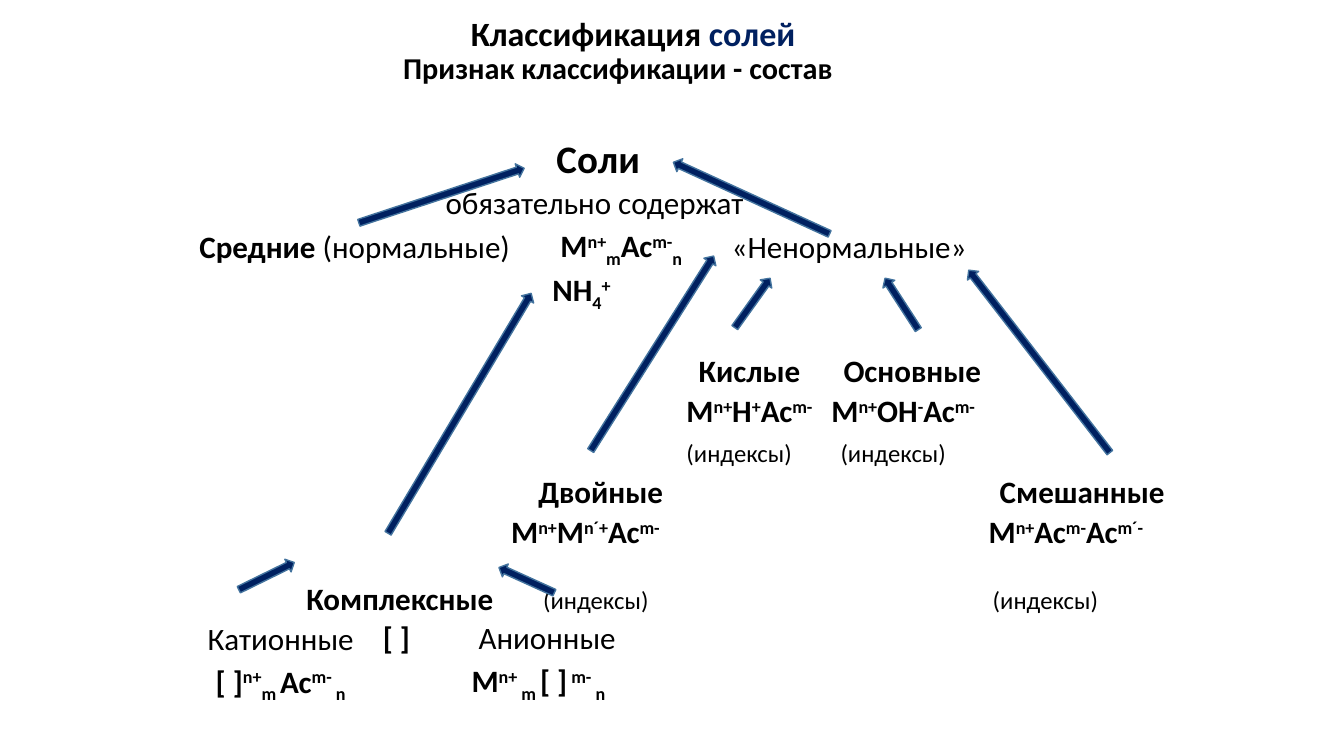
from math import atan2, degrees, hypot

from lxml.etree import SubElement
from pptx import Presentation
from pptx.dml.color import RGBColor
from pptx.enum.shapes import MSO_SHAPE
from pptx.enum.text import MSO_ANCHOR, MSO_AUTO_SIZE, PP_ALIGN
from pptx.oxml.ns import qn
from pptx.util import Inches, Pt

# The slide is laid on a grid of square cells, 133.33 columns by 75 rows.
CELL = Inches(0.1)
COLUMNS, ROWS = 133.33, 75
COLORS = {"text": "000000", "navy": "002060", "outline": "43739E"}
FONT = "Calibri"
LARGE, NORMAL, SMALL = 27.8, 22.2, 17.6
HEADING, SUBHEADING = 24.3, 21.6
GAP, BRANCH_GAP = 10, 39
ABOVE_SMALL, BELOW_SMALL, INDICES_GAP = 12.7, 11.2, 31.7
BASELINES = {"^": "30000", "_": "-25000"}
ARROW_THICKNESS = 1.4
SALTS_LEFT = 13.3

# Each line: space before, indent in columns, size, markup.
TITLE_LINES = [
    (0, 36.5, HEADING, "*Классификация |#солей"),
    (0, 29.8, SUBHEADING, "*Признак классификации - состав"),
]
SALT_LINES = [
    (0, 40.9, LARGE, "*Соли"),
    (GAP, 29.9, NORMAL, "обязательно содержат"),
    (GAP, 41.3, NORMAL, "*М|^n+|_m|*Ас|^m-|_n"),
    (GAP, 40.5, NORMAL, "*NH|_4|^+"),
    (BRANCH_GAP, 55, NORMAL, "*Кислые"),
    (GAP, 53.8, NORMAL, "*М|^n+|*Н|^+|*Ас|^m-"),
    (ABOVE_SMALL, 53.8, SMALL, "(индексы)"),
    (BELOW_SMALL, 39.1, NORMAL, "*Двойные"),
    (GAP, 36.4, NORMAL, "*М|^n+|*М|^n´+|*Ас|^m-"),
    (29, 16.1, NORMAL, "*Комплексные"),
    (GAP, 6.3, NORMAL, "Катионные"),
    (GAP, 7.1, NORMAL, "*[ ]|^n+|_m |*Ас|^m- |_n"),
]
# Each side group: column from the left of the salts, row, width, lines.
SIDE_GROUPS = [
    (5.5, 23.1, 34, [(0, 0, NORMAL, "*Средние| (нормальные)")]),
    (58.3, 23.1, 28, [(0, 0, NORMAL, "«Ненормальные»")]),
    (68.2, 35.4, 20, [(0, 1.2, NORMAL, "*Основные"),
                      (GAP, 0, NORMAL, "*М|^n+|*ОН|^-|*Ас|^m-"),
                      (ABOVE_SMALL, 0.9, SMALL, "(индексы)")]),
    (83.8, 47.4, 22, [(0, 1.1, NORMAL, "*Смешанные"),
                      (GAP, 0, NORMAL, "*М|^n+|*Ас|^m-|*Ас|^m´-"),
                      (INDICES_GAP, 0.4, SMALL, "(индексы)")]),
    (39.6, 58.3, 16, [(0, 0, SMALL, "(индексы)")]),
    (23.7, 61.9, 7, [(0, 0, NORMAL, "*[ ]")]),
    (32.5, 61.9, 20, [(0, 0.7, NORMAL, "Анионные"),
                      (GAP, 0, NORMAL, "*М|^n+ |_m |*[ ]|^ m- |_n")]),
]
# Each arrow: column and row of its tail, then of its head.
ARROWS = [
    ((38.5, 52.9), (52.7, 29.1)),
    ((35.6, 22.1), (52, 16.7)),
    ((91.1, 32.7), (87.8, 27.6)),
    ((58.6, 44.7), (70.8, 25.4)),
    ((110.1, 44.9), (96.1, 26.8)),
    ((82.3, 23.2), (66.8, 16.1)),
    ((72.9, 32.5), (76.4, 27.6)),
    ((23.7, 58.5), (29.2, 55.8)),
    ((55, 58.8), (49.5, 56.3)),
]


def cells(count):
    return round(count * CELL)


def rgb(name):
    return RGBColor.from_string(COLORS[name])


def apply(target, values):
    for attribute, value in values.items():
        setattr(target, attribute, value)


def add_markup(paragraph, markup, size):
    """Write parts split by |: * bold, # bold navy, ^ superscript, _ subscript."""
    for part in markup.split("|"):
        mark = part[0] if part[0] in "*#^_" else ""
        run = paragraph.add_run()
        run.text = part[len(mark):]
        apply(run.font, {"name": FONT, "size": Pt(size), "bold": bool(mark)})
        run.font.color.rgb = rgb("navy" if mark == "#" else "text")
        if mark in BASELINES:
            run.font._element.set("baseline", BASELINES[mark])


def indent(paragraph, columns):
    properties = paragraph._p.get_or_add_pPr()
    properties.set("marL", str(cells(columns)))
    properties.set("indent", "0")
    SubElement(properties, qn("a:buNone"))


def write_lines(frame, lines, anchor=MSO_ANCHOR.TOP, line_spacing=0.7):
    apply(frame, {"word_wrap": True, "auto_size": MSO_AUTO_SIZE.NONE,
                  "vertical_anchor": anchor})
    for index, (space_before, column, size, markup) in enumerate(lines):
        paragraph = frame.add_paragraph() if index else frame.paragraphs[0]
        indent(paragraph, column)
        apply(paragraph, {"alignment": PP_ALIGN.LEFT, "line_spacing": line_spacing,
                          "space_before": Pt(space_before), "space_after": Pt(0)})
        add_markup(paragraph, markup, size)


def place(placeholder, *box):
    apply(placeholder, dict(zip(("left", "top", "width", "height"), map(cells, box))))


def add_side_group(slide, column, row, width, lines):
    box = (SALTS_LEFT + column, row, width, 4 * len(lines))
    write_lines(slide.shapes.add_textbox(*map(cells, box)).text_frame, lines)


def add_arrow(slide, tail, head):
    across, down = head[0] - tail[0], head[1] - tail[1]
    length = hypot(across, down)
    left = (tail[0] + head[0] - length) / 2
    top = (tail[1] + head[1] - ARROW_THICKNESS) / 2
    arrow = slide.shapes.add_shape(
        MSO_SHAPE.RIGHT_ARROW, *map(cells, (left, top, length, ARROW_THICKNESS)))
    arrow.rotation = degrees(atan2(down, across)) % 360
    arrow.shadow.inherit = False
    arrow.fill.solid()
    arrow.fill.fore_color.rgb = rgb("navy")
    arrow.line.color.rgb = rgb("outline")
    arrow.line.width = Pt(1)


def main():
    presentation = Presentation()
    apply(presentation, {"slide_width": cells(COLUMNS), "slide_height": cells(ROWS)})
    slide = presentation.slides.add_slide(presentation.slide_layouts[1])
    title, salts = slide.placeholders
    place(title, 9.2, 0, 115, 10.2)
    write_lines(title.text_frame, TITLE_LINES, MSO_ANCHOR.MIDDLE, 0.9)
    place(salts, SALTS_LEFT, 14.1, 105.7, 53.4)
    write_lines(salts.text_frame, SALT_LINES)
    for group in SIDE_GROUPS:
        add_side_group(slide, *group)
    for tail, head in ARROWS:
        add_arrow(slide, tail, head)
    presentation.save("out.pptx")


if __name__ == "__main__":
    main()
